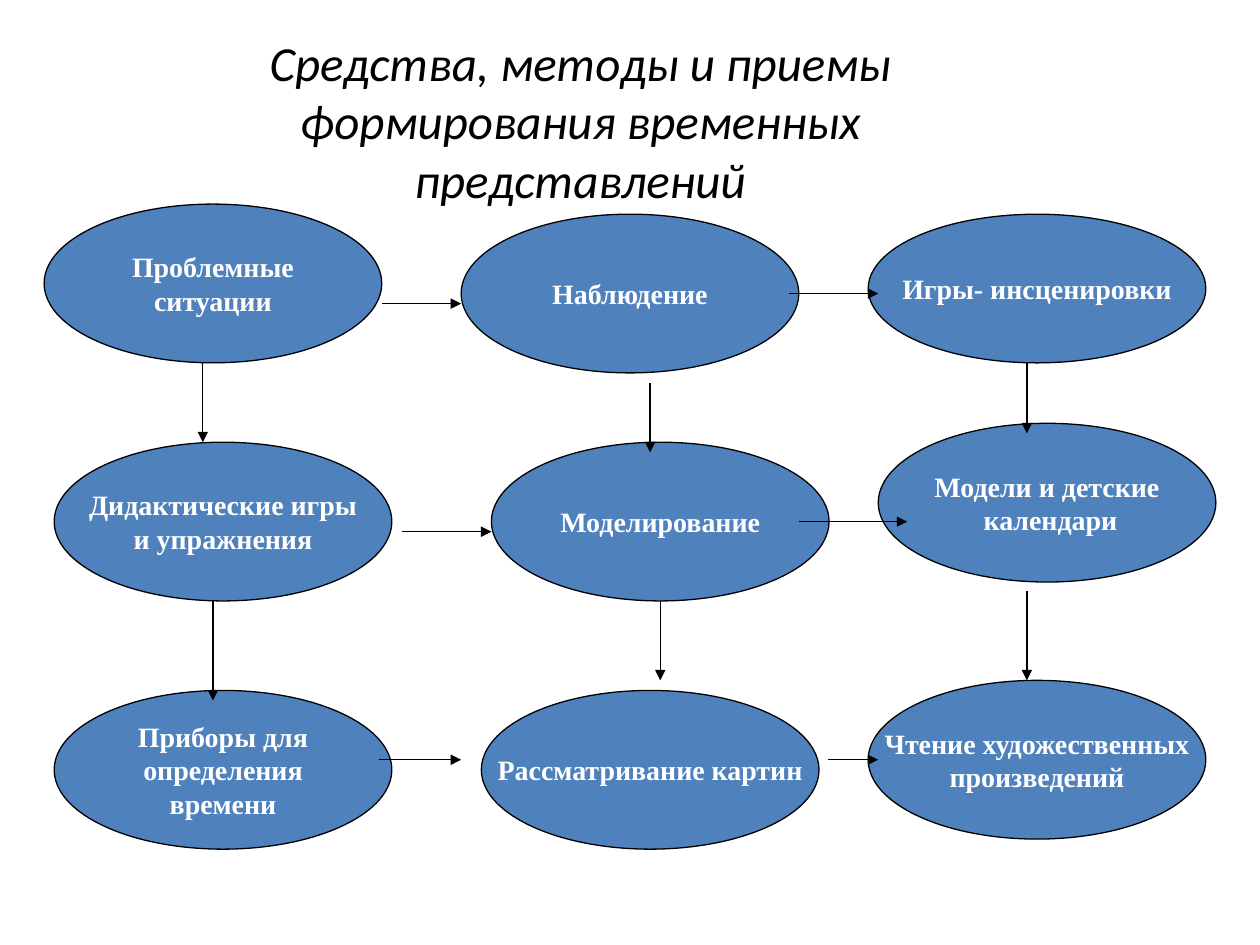
import pptx
import pptx.util
import pptx.dml.color
import pptx.enum.shapes
import pptx.enum.text
from dataclasses import dataclass
from lxml import etree
from pptx.util import Inches

BLACK, WHITE, BLUE = "000000", "FFFFFF", "4F81BD"
OVAL_W, OVAL_H = 2.68, 1.26
NS = "http://schemas.openxmlformats.org/drawingml/2006/main"


@dataclass
class Oval:
    left: float
    top: float
    lines: tuple[str, ...]
    high: float = OVAL_H


@dataclass
class Arrow:
    x1: float
    y1: float
    x2: float
    y2: float


OVALS = [
    Oval(6.89, 1.7, ("Игры- инсценировки",), 1.18),
    Oval(0.35, 1.62, ("Проблемные", "ситуации")),
    Oval(3.66, 1.7, ("Наблюдение",)),
    Oval(3.9, 3.51, ("Моделирование",)),
    Oval(0.43, 3.51, ("Дидактические игры", "и упражнения")),
    Oval(6.89, 5.4, ("Чтение художественных", "произведений")),
    Oval(6.97, 3.36, ("Модели и детские", " календари")),
    Oval(0.43, 5.48, ("Приборы для", "определения", "времени")),
    Oval(3.82, 5.48, ("Рассматривание картин",)),
]

ARROWS = [
    # Down the columns
    Arrow(1.61, 2.88, 1.61, 3.51),
    Arrow(1.69, 4.77, 1.69, 5.56),
    Arrow(5.16, 3.04, 5.16, 3.59),
    Arrow(5.24, 4.77, 5.24, 5.4),
    Arrow(8.15, 2.88, 8.15, 3.44),
    Arrow(8.15, 4.69, 8.15, 5.4),
    # Along the rows
    Arrow(3.03, 2.41, 3.66, 2.41),
    Arrow(6.26, 2.33, 6.97, 2.33),
    Arrow(3.19, 4.22, 3.9, 4.22),
    Arrow(6.34, 4.14, 7.2, 4.14),
    Arrow(3.01, 6.03, 3.66, 6.03),
    Arrow(6.57, 6.03, 6.97, 6.03),
]


def color(code: str) -> pptx.dml.color.RGBColor:
    return pptx.dml.color.RGBColor.from_string(code)


def add_run(para, text: str, size: float, face: str, code: str):
    para.alignment = pptx.enum.text.PP_ALIGN.CENTER
    run = para.add_run()
    run.text = text
    run.font.size = pptx.util.Pt(size)
    run.font.name = face
    run.font.color.rgb = color(code)
    return run


def set_line(line) -> None:
    line.color.rgb = color(BLACK)
    line.width = pptx.util.Pt(0.75)


def draw_title(slide, text: str) -> None:
    title = slide.shapes.title
    title.left, title.top = Inches(1.06), Inches(0.6)
    title.width, title.height = Inches(7.09), Inches(0.71)
    frame = title.text_frame
    frame.word_wrap = True
    frame.auto_size = pptx.enum.text.MSO_AUTO_SIZE.NONE
    frame.vertical_anchor = pptx.enum.text.MSO_ANCHOR.MIDDLE
    run = add_run(frame.paragraphs[0], text, 28, "Calibri", BLACK)
    run.font.italic = True


def draw_oval(slide, oval: Oval) -> None:
    shape = slide.shapes.add_shape(
        pptx.enum.shapes.MSO_SHAPE.OVAL, Inches(oval.left), Inches(oval.top),
        Inches(OVAL_W), Inches(oval.high))
    shape.shadow.inherit = False
    shape.fill.solid()
    shape.fill.fore_color.rgb = color(BLUE)
    set_line(shape.line)
    frame = shape.text_frame
    frame.word_wrap = False
    frame.vertical_anchor = pptx.enum.text.MSO_ANCHOR.MIDDLE
    for i, text in enumerate(oval.lines):
        para = frame.add_paragraph() if i else frame.paragraphs[0]
        run = add_run(para, text, 16, "Times New Roman", WHITE)
        run.font.bold = True


def draw_arrow(slide, arrow: Arrow) -> None:
    link = slide.shapes.add_connector(
        pptx.enum.shapes.MSO_CONNECTOR.STRAIGHT,
        Inches(arrow.x1), Inches(arrow.y1), Inches(arrow.x2), Inches(arrow.y2))
    set_line(link.line)
    # Arrowhead at the end, no shadow
    props = link._element.spPr
    etree.SubElement(props.find(f"{{{NS}}}ln"), f"{{{NS}}}tailEnd", type="triangle")
    etree.SubElement(props, f"{{{NS}}}effectLst")


def main() -> None:
    deck = pptx.Presentation()
    deck.slide_width, deck.slide_height = Inches(10), Inches(7.5)
    slide = deck.slides.add_slide(deck.slide_layouts[5])
    draw_title(slide, "Средства, методы и приемы формирования временных представлений")
    for oval in OVALS:
        draw_oval(slide, oval)
    for arrow in ARROWS:
        draw_arrow(slide, arrow)
    deck.save("out.pptx")


if __name__ == "__main__":
    main()
